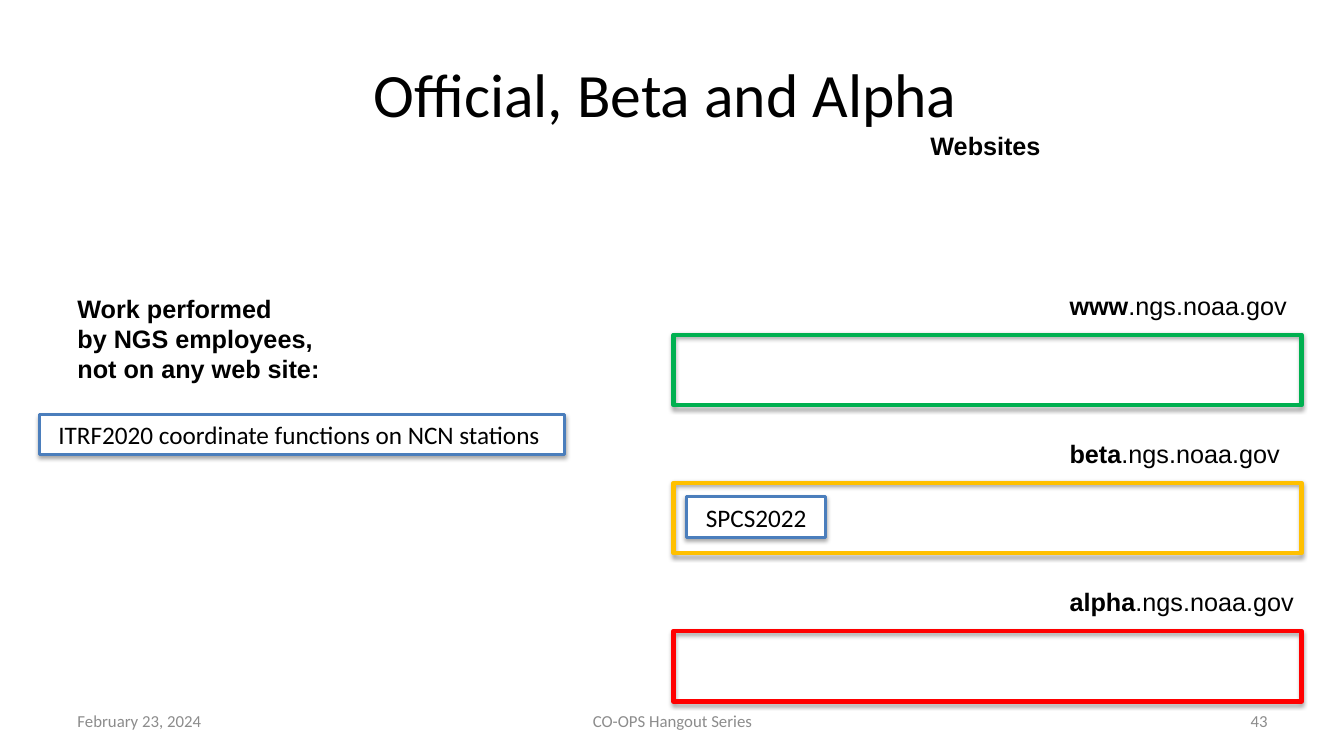
from dataclasses import dataclass
from typing import Any, Optional

from lxml.etree import SubElement
from pptx import Presentation
from pptx.dml.color import RGBColor
from pptx.enum.shapes import MSO_SHAPE
from pptx.enum.text import MSO_ANCHOR, MSO_AUTO_SIZE, PP_ALIGN
from pptx.oxml.ns import qn
from pptx.util import Inches, Pt


@dataclass(frozen=True)
class Theme:
    black: RGBColor = RGBColor(0, 0, 0)
    white: RGBColor = RGBColor(255, 255, 255)
    grey: RGBColor = RGBColor(0x8C, 0x8C, 0x8C)
    blue: RGBColor = RGBColor(0x4B, 0x7E, 0xBC)
    green: RGBColor = RGBColor(0, 0xB0, 0x50)
    amber: RGBColor = RGBColor(0xFF, 0xC0, 0)
    red: RGBColor = RGBColor(0xFF, 0, 0)
    title: Any = Pt(44)
    body: Any = Pt(18)
    footer: Any = Pt(12)
    heading_font: str = "Calibri"
    label_font: str = "Arial"


@dataclass(frozen=True)
class Area:
    left: float
    top: float
    width: float
    height: float

    def lengths(self) -> tuple:
        return tuple(Inches(v) for v in (self.left, self.top, self.width, self.height))


@dataclass(frozen=True)
class Site:
    prefix: str
    label_width: float
    color: RGBColor


@dataclass(frozen=True)
class Note:
    text: str
    area: Area


@dataclass(frozen=True)
class Footer:
    text: str
    area: Area
    align: PP_ALIGN


THEME = Theme()
CALIBRI = {"name": THEME.heading_font, "size": THEME.body}
ARIAL = {"name": THEME.label_font, "size": THEME.body}
BOLD = {**ARIAL, "bold": True}

SITE_TOP, SITE_PITCH, LABEL_RISE = 3.32, 1.47, 0.49
SITES = [
    Site("www", 2.38, THEME.green),
    Site("beta", 2.31, THEME.amber),
    Site("alpha", 2.45, THEME.red),
]
NOTES = [
    Note("ITRF2020 coordinate functions on NCN stations ", Area(0.39, 4.11, 5.21, 0.4)),
    Note("SPCS2022", Area(6.81, 4.93, 1.38, 0.4)),
]
FOOTERS = [
    Footer("February 23, 2024", Area(0.67, 6.95, 3.11, 0.4), PP_ALIGN.LEFT),
    Footer("CO-OPS Hangout Series", Area(4.56, 6.95, 4.22, 0.4), PP_ALIGN.CENTER),
    Footer("43", Area(9.56, 6.95, 3.11, 0.4), PP_ALIGN.RIGHT),
]


def set_all(target: Any, values: dict) -> None:
    for name, value in values.items():
        setattr(target, name, value)


def add_run(p: Any, text: str, font: dict, color: RGBColor = THEME.black) -> None:
    r = p.add_run()
    r.text = text
    set_all(r.font, font)
    r.font.color.rgb = color


def add_label(s: Any, area: Area, lines: list[list[tuple[str, dict]]]) -> None:
    tf = s.shapes.add_textbox(*area.lengths()).text_frame
    set_all(tf, {"word_wrap": False, "auto_size": MSO_AUTO_SIZE.SHAPE_TO_FIT_TEXT})
    for i, line in enumerate(lines):
        p = tf.add_paragraph() if i else tf.paragraphs[0]
        for text, font in line:
            add_run(p, text, font)


def add_footer(s: Any, footer: Footer) -> None:
    tf = s.shapes.add_textbox(*footer.area.lengths()).text_frame
    set_all(tf, {"word_wrap": True, "vertical_anchor": MSO_ANCHOR.MIDDLE})
    p = tf.paragraphs[0]
    p.alignment = footer.align
    add_run(p, footer.text, {**CALIBRI, "size": THEME.footer}, THEME.grey)


def add_frame(s: Any, area: Area, color: RGBColor, weight: float,
              fill: Optional[RGBColor] = None) -> Any:
    sp = s.shapes.add_shape(MSO_SHAPE.RECTANGLE, *area.lengths())
    if fill is None:
        sp.fill.background()
    else:
        sp.fill.solid()
        sp.fill.fore_color.rgb = fill
    sp.line.color.rgb = color
    sp.line.width = Pt(weight)
    sp.shadow.inherit = False
    effects = sp.element.spPr.find(qn("a:effectLst"))
    shadow = SubElement(effects, qn("a:outerShdw"), blurRad=str(Pt(3.1)),
                        dist=str(Pt(1.8)), dir="5400000", rotWithShape="0")
    tint = SubElement(shadow, qn("a:srgbClr"), val=str(THEME.black))
    SubElement(tint, qn("a:alpha"), val="35000")
    return sp


def add_note(s: Any, note: Note) -> None:
    tf = add_frame(s, note.area, THEME.blue, 2, THEME.white).text_frame
    set_all(tf, {"word_wrap": True, "vertical_anchor": MSO_ANCHOR.MIDDLE})
    p = tf.paragraphs[0]
    p.alignment = PP_ALIGN.CENTER
    add_run(p, note.text, CALIBRI)


def add_title(s: Any, text: str, area: Area) -> None:
    sp = s.shapes.title
    set_all(sp, dict(zip(("left", "top", "width", "height"), area.lengths())))
    tf = sp.text_frame
    tf.vertical_anchor = MSO_ANCHOR.MIDDLE
    p = tf.paragraphs[0]
    p.alignment = PP_ALIGN.CENTER
    add_run(p, text, {**CALIBRI, "size": THEME.title})


def main() -> None:
    prs = Presentation()
    set_all(prs, {"slide_width": Inches(13.33), "slide_height": Inches(7.5)})
    s = prs.slides.add_slide(prs.slide_layouts.get_by_name("Title Only"))

    add_title(s, "Official, Beta and Alpha ", Area(0.67, 0.3, 12, 1.25))
    for footer in FOOTERS:
        add_footer(s, footer)
    add_label(s, Area(9.13, 1.24, 1.38, 0.4), [[("Websites", BOLD)]])
    for i, site in enumerate(SITES):
        top = SITE_TOP + i * SITE_PITCH
        add_frame(s, Area(6.68, top, 6.23, 0.7), site.color, 3)
        add_label(s, Area(10.51, top - LABEL_RISE, site.label_width, 0.4),
                  [[(site.prefix, BOLD), (".ngs.noaa.gov", ARIAL)]])
    for note in NOTES:
        add_note(s, note)
    work = ["Work performed", "by NGS employees,", "not on any web site:"]
    add_label(s, Area(0.67, 2.86, 2.63, 1.01), [[(line, BOLD)] for line in work])

    prs.save("out.pptx")


if __name__ == "__main__":
    main()
